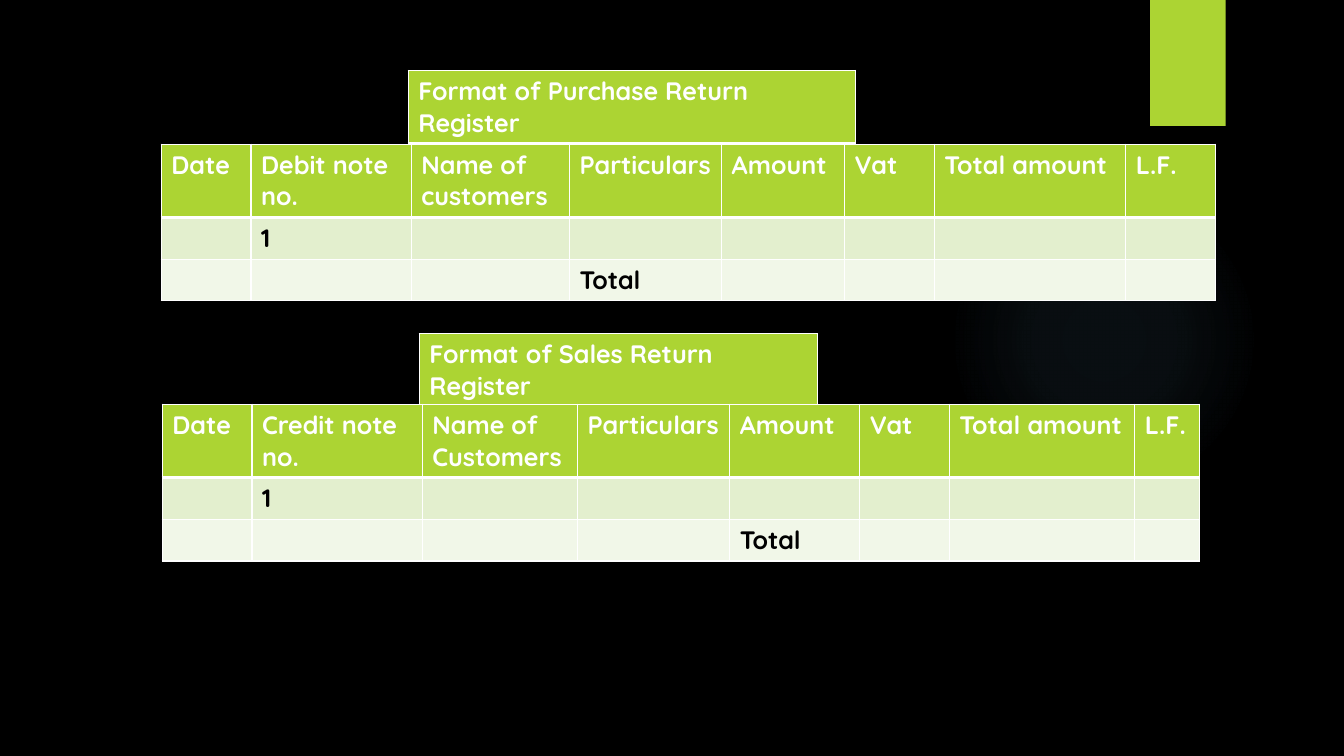
from lxml import etree
from pptx import Presentation, util as u
from pptx.dml.color import RGBColor
from pptx.enum import shapes
from pptx.oxml import parse_xml
from pptx.oxml.ns import nsdecls, qn

BLACK = RGBColor(0x00, 0x00, 0x00)
WHITE = RGBColor(0xFF, 0xFF, 0xFF)
LIME = RGBColor(0xAC, 0xD4, 0x33)
PALE_LIME = RGBColor(0xE3, 0xEF, 0xCE)
PALEST_LIME = RGBColor(0xF1, 0xF7, 0xE8)
GLOW_BLUE = RGBColor(0x7A, 0xC4, 0xF0)
FONT = "Quicksand"
ROW = 4.1
THIN, THICK = 1, 3


def grid(count):
    """Return the length of a number of tenth-inch grid steps."""
    return u.Inches(count / 10)


def add_plain_shape(slide, preset, left, top, width, height):
    """Add a preset shape without outline or shadow."""
    shape = slide.shapes.add_shape(
        preset, grid(left), grid(top), grid(width), grid(height))
    shape.shadow.inherit = False
    shape.line.fill.background()
    return shape


def add_glow(slide):
    """Add the faint round glow that fades to its rim."""
    glow = add_plain_shape(slide, shapes.MSO_SHAPE.OVAL, 94.1, 18.3, 30.8, 30.8)
    stops = "".join(
        f'<a:gs pos="{place * 1000}"><a:srgbClr val="{GLOW_BLUE}">'
        f'<a:alpha val="{alpha * 1000}"/></a:srgbClr></a:gs>'
        for place, alpha in ((0, 7), (36, 6), (69, 0)))
    fade = parse_xml(
        f'<a:gradFill {nsdecls("a")}><a:gsLst>{stops}</a:gsLst>'
        '<a:path path="circle"><a:fillToRect l="50000" t="50000" '
        'r="50000" b="50000"/></a:path></a:gradFill>')
    glow.element.spPr.find(qn("a:prstGeom")).addnext(fade)


def add_tab(slide):
    """Add the lime tab hanging from the top edge."""
    tab = add_plain_shape(slide, shapes.MSO_SHAPE.RECTANGLE, 114.1, 0, 7.5, 12.5)
    tab.fill.solid()
    tab.fill.fore_color.rgb = LIME


def set_borders(cell, top, bottom):
    """Draw white borders around a cell, with widths in points."""
    properties = cell._tc.get_or_add_tcPr()
    for side, width in (("L", THIN), ("R", THIN), ("T", top), ("B", bottom)):
        line = etree.SubElement(
            properties, qn(f"a:ln{side}"), w=str(u.Pt(width)))
        fill = etree.SubElement(line, qn("a:solidFill"))
        etree.SubElement(fill, qn("a:srgbClr"), val=str(WHITE))


def style_cell(cell, row):
    """Give a cell the borders, fill and font of its row."""
    set_borders(cell, THICK if row == 1 else THIN, THICK if row == 0 else THIN)
    cell.fill.solid()
    cell.fill.fore_color.rgb = (LIME, PALE_LIME, PALEST_LIME)[row]
    for paragraph in cell.text_frame.paragraphs:
        paragraph.font.size = u.Pt(18)
        for run in paragraph.runs:
            run.font.name = FONT
            run.font.size = u.Pt(18)
            run.font.bold = True
            run.font.color.rgb = BLACK if row else WHITE


def add_grid_table(slide, left, top, widths, rows):
    """Add a table with the given column widths and rows of text."""
    table = slide.shapes.add_table(
        len(rows), len(widths), grid(left), grid(top),
        grid(sum(widths)), grid(ROW * len(rows))).table
    for column, width in zip(table.columns, widths):
        column.width = grid(width)
    for row, texts in enumerate(rows):
        table.rows[row].height = grid(ROW)
        for column, text in enumerate(texts):
            cell = table.cell(row, column)
            cell.text_frame.text = text
            style_cell(cell, row)


def add_register(slide, left, top, widths, note, customers, total_column):
    """Add a return register with its header, entry and total rows."""
    header = ["Date", note, customers, "Particulars", "Amount", "Vat",
              "Total amount", "L.F."]
    entry = ["1" if heading == note else "" for heading in header]
    total = ["Total" if heading == total_column else "" for heading in header]
    add_grid_table(slide, left, top, widths, [header, entry, total])


def main():
    """Build the slide with both return registers."""
    deck = Presentation()
    deck.slide_width, deck.slide_height = grid(133.33), grid(75)
    slide = deck.slides.add_slide(deck.slide_layouts[6])
    slide.background.fill.solid()
    slide.background.fill.fore_color.rgb = BLACK
    add_glow(slide)
    add_tab(slide)
    add_grid_table(slide, 40.5, 7, [44.4],
                   [["Format of Purchase Return Register"]])
    add_register(slide, 16, 14.3, [8.9, 15.9, 15.7, 15.1, 12.2, 8.9, 19, 8.9],
                 "Debit note\nno.", "Name of customers", "Particulars")
    add_grid_table(slide, 41.6, 33.1, [39.5],
                   [["Format of Sales Return Register"]])
    add_register(slide, 16.1, 40.1, [8.9, 16.9, 15.4, 15.1, 12.9, 8.9, 18.4, 6.4],
                 "Credit note\nno.", "Name of\nCustomers", "Amount")
    deck.save("out.pptx")


if __name__ == "__main__":
    main()
